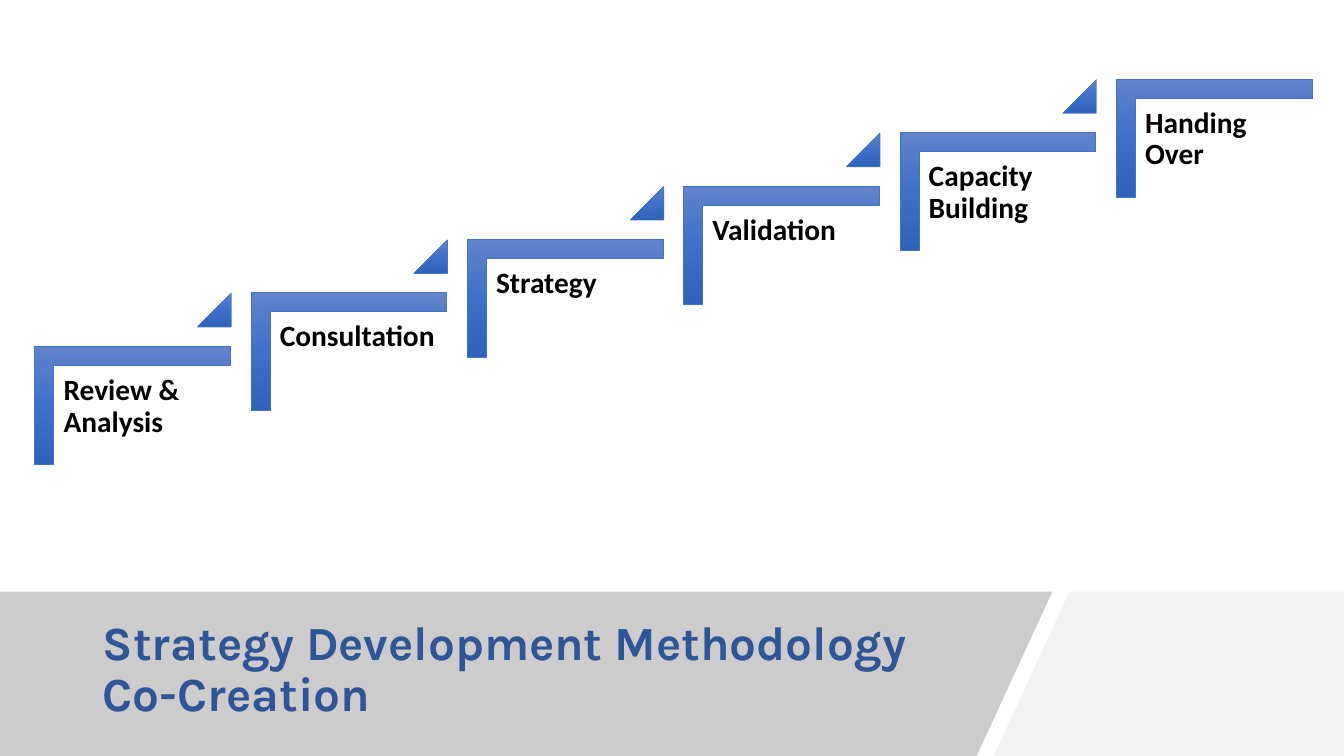
from dataclasses import dataclass

import pptx
import pptx.dml.color
import pptx.enum.shapes
import pptx.enum.text
import pptx.oxml
import pptx.oxml.ns
import pptx.shapes.autoshape
import pptx.slide
import pptx.text.text
import pptx.util
from lxml import etree

RGBColor = pptx.dml.color.RGBColor
Preset = pptx.enum.shapes.MSO_SHAPE
Anchor = pptx.enum.text.MSO_ANCHOR

COLUMNS, ROWS = 160, 90
CELL = pptx.util.Inches(7.5) // ROWS

BLACK = RGBColor(0x00, 0x00, 0x00)
TITLE_BLUE = RGBColor(0x2F, 0x55, 0x97)
EDGE_BLUE = RGBColor(0x44, 0x72, 0xC4)
BAND_GREY = RGBColor(0x80, 0x80, 0x80)
PALE_GREY = RGBColor(0xF2, 0xF2, 0xF2)
GRADIENT = (
    (0, RGBColor(0x61, 0x83, 0xCB)),
    (50, RGBColor(0x3E, 0x70, 0xCA)),
    (100, RGBColor(0x30, 0x62, 0xBB)),
)

BAND_TOP = 70.44
STEP_LEFT, STEP_TOP = 4.14, 41.22
STEP_RIGHT, STEP_UP = 25.75, 6.36
STEP_WIDTH, STEP_HEIGHT = 23.3, 14.04
STEP_NAMES = (
    "Review & Analysis",
    "Consultation",
    "Strategy",
    "Validation",
    "Capacity Building",
    "Handing Over",
)


@dataclass(frozen=True)
class Frame:
    column: float
    row: float
    columns: float
    rows: float

    def lengths(self) -> list[int]:
        return [round(n * CELL) for n in (self.column, self.row, self.columns, self.rows)]


@dataclass(frozen=True)
class Band:
    corners: tuple[tuple[float, float], ...]
    color: RGBColor
    opacity: int


BANDS = (
    Band(((127.32, BAND_TOP), (COLUMNS, BAND_TOP), (COLUMNS, ROWS), (118.32, ROWS)), PALE_GREY, 100),
    Band(((0, BAND_TOP), (125.28, BAND_TOP), (116.28, ROWS), (0, ROWS)), BAND_GREY, 40),
)


def draw_band(page: pptx.slide.Slide, band: Band) -> None:
    points = [(round(x * 100), round(y * 100)) for x, y in band.corners]
    builder = page.shapes.build_freeform(*points[0], scale=CELL / 100)
    builder.add_line_segments(points[1:], close=True)
    shape = builder.convert_to_shape()
    shape.shadow.inherit = False
    shape.fill.solid()
    shape.fill.fore_color.rgb = band.color
    shape.line.fill.background()
    if band.opacity < 100:
        color = shape._element.spPr.find(".//" + pptx.oxml.ns.qn("a:srgbClr"))
        etree.SubElement(color, pptx.oxml.ns.qn("a:alpha"), val=str(band.opacity * 1000))


def add_span(para: pptx.text.text._Paragraph, text: str, font: str, size: float, color: RGBColor) -> None:
    para.line_spacing = 0.9
    para.alignment = pptx.enum.text.PP_ALIGN.LEFT
    span = para.add_run()
    span.text = text
    span.font.name = font
    span.font.size = pptx.util.Pt(size)
    span.font.bold = True
    span.font.color.rgb = color


def draw_title(page: pptx.slide.Slide) -> None:
    title = page.shapes.title
    title.left, title.top, title.width, title.height = Frame(11.04, 72.6, 106, 14.4).lengths()
    page.shapes._spTree.append(title._element)
    title.text_frame.word_wrap = True
    title.text_frame.auto_size = pptx.enum.text.MSO_AUTO_SIZE.NONE
    title.text_frame.vertical_anchor = Anchor.MIDDLE
    para = title.text_frame.paragraphs[0]
    add_span(para, "Strategy Development Methodology", "Karla", 34, TITLE_BLUE)
    para.add_line_break()
    add_span(para, "Co-Creation", "Karla", 34, TITLE_BLUE)


def draw_blue_shape(
    page: pptx.slide.Slide, preset: Preset, frame: Frame, adjustments: tuple[float, ...]
) -> pptx.shapes.autoshape.Shape:
    shape = page.shapes.add_shape(preset, *frame.lengths())
    shape.shadow.inherit = False
    for index, value in enumerate(adjustments):
        shape.adjustments[index] = value
    stops = "".join(
        f'<a:gs pos="{place * 1000}"><a:srgbClr val="{color}"/></a:gs>' for place, color in GRADIENT
    )
    gradient = pptx.oxml.parse_xml(
        f'<a:gradFill {pptx.oxml.ns.nsdecls("a")} rotWithShape="0"><a:gsLst>{stops}</a:gsLst>'
        '<a:lin ang="5400000" scaled="0"/></a:gradFill>'
    )
    shape._element.spPr.find(pptx.oxml.ns.qn("a:prstGeom")).addnext(gradient)
    shape.line.color.rgb = EDGE_BLUE
    shape.line.width = pptx.util.Pt(0.5)
    return shape


def draw_step(page: pptx.slide.Slide, index: int, name: str) -> None:
    left = STEP_LEFT + index * STEP_RIGHT
    top = STEP_TOP - index * STEP_UP
    turn = (STEP_WIDTH - STEP_HEIGHT) / 2
    corner_frame = Frame(left + turn, top - turn, STEP_HEIGHT, STEP_WIDTH)
    corner = draw_blue_shape(page, Preset.CORNER, corner_frame, (0.161, 0.161))
    corner.rotation = 90

    box = page.shapes.add_textbox(*Frame(left + 2.34, top + 2.34, 21, 18.48).lengths())
    text = box.text_frame
    text.word_wrap = True
    text.vertical_anchor = Anchor.TOP
    text.margin_left = text.margin_right = text.margin_top = text.margin_bottom = round(1.08 * CELL)
    add_span(text.paragraphs[0], name, "Calibri", 21, BLACK)

    if index < len(STEP_NAMES) - 1:
        draw_blue_shape(page, Preset.ISOSCELES_TRIANGLE, Frame(left + 19.38, top - 6.3, 4, 4), (1,))


def main() -> None:
    deck = pptx.Presentation()
    deck.slide_width = COLUMNS * CELL
    deck.slide_height = ROWS * CELL
    page = deck.slides.add_slide(deck.slide_layouts.get_by_name("Title Only"))
    for band in BANDS:
        draw_band(page, band)
    draw_title(page)
    for index, name in enumerate(STEP_NAMES):
        draw_step(page, index, name)
    deck.save("out.pptx")


if __name__ == "__main__":
    main()
